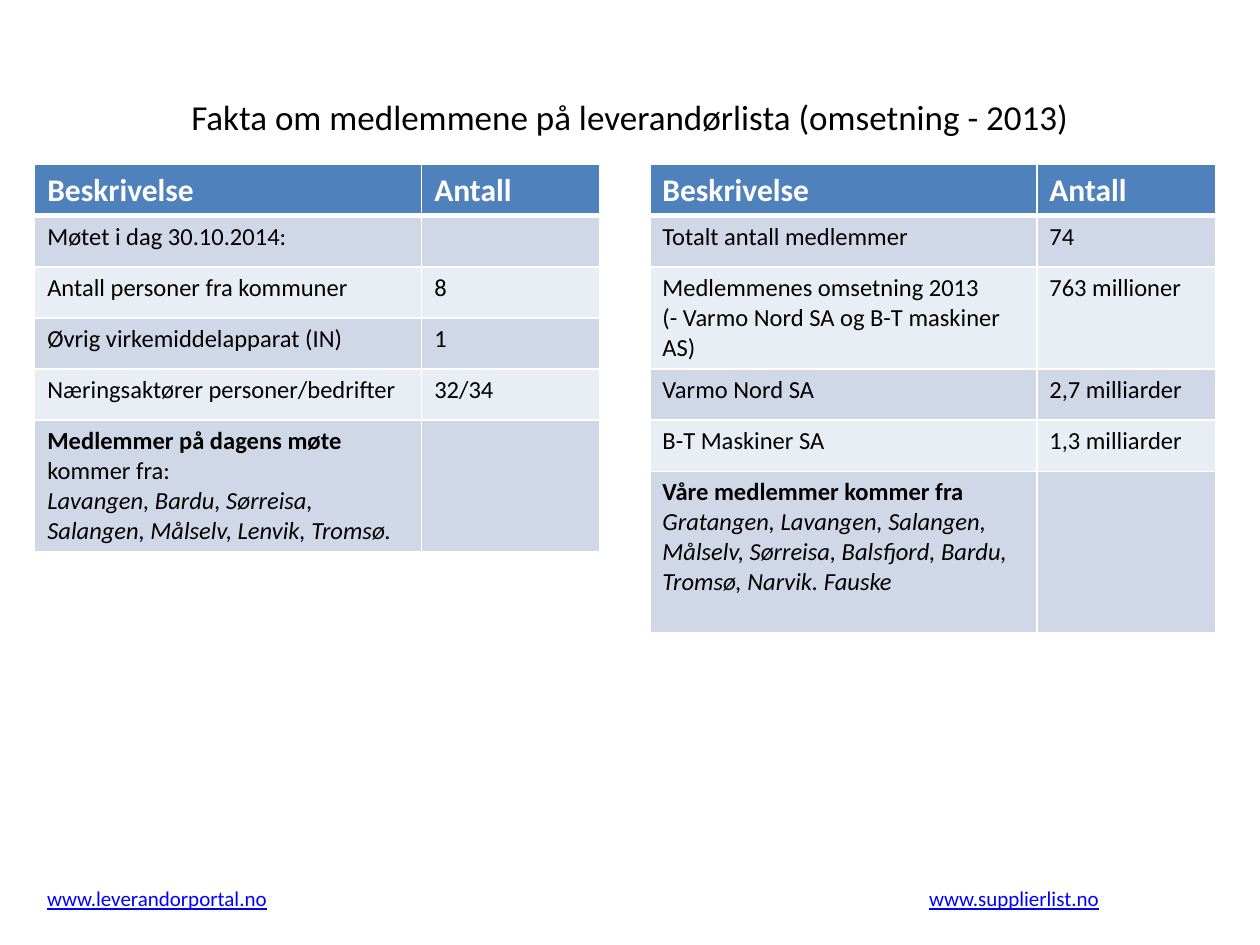
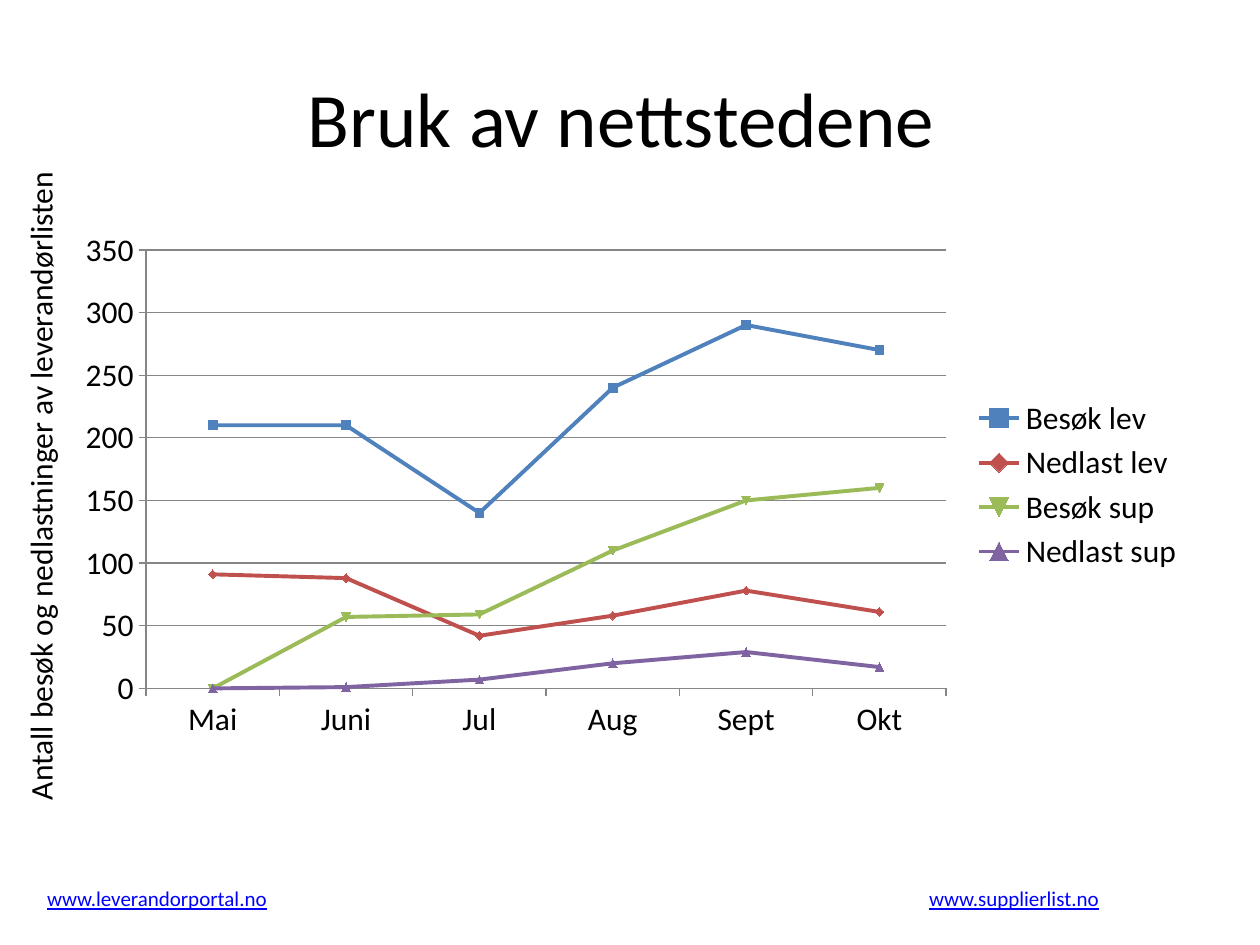
"""Builds two slides with member facts and website usage for a supplier list."""
from typing import NamedTuple

from lxml.etree import SubElement
from pptx import Presentation
from pptx.chart.data import CategoryChartData
from pptx.dml.color import RGBColor
from pptx.enum.chart import XL_CHART_TYPE as ChartType
from pptx.enum.chart import XL_LEGEND_POSITION as LegendPosition
from pptx.enum.chart import XL_TICK_MARK as TickMark
from pptx.enum.text import MSO_ANCHOR as Anchor
from pptx.enum.text import PP_ALIGN as Align
from pptx.oxml.ns import qn
from pptx.util import Cm, Pt

BLACK = RGBColor(0x00, 0x00, 0x00)
WHITE = RGBColor(0xFF, 0xFF, 0xFF)
LINK_BLUE = RGBColor(0x00, 0x00, 0xFF)
HEADER_BLUE = RGBColor(0x4F, 0x81, 0xBD)
BANDS = (RGBColor(0xE9, 0xED, 0xF4), RGBColor(0xD0, 0xD8, 0xE8))
AXIS_GREY = RGBColor(0x86, 0x86, 0x86)
FONT = "Calibri"

LEFT_MARGIN = Cm(0.7)
ROW_HEIGHT = Cm(1.03)
COLUMN_WIDTHS = (Cm(7.8), Cm(3.6))
TABLE_TOP = Cm(3.32)
BORDER_SIDES = ("L", "R", "T", "B")
MONTHS = ("Mai", "Juni", "Jul", "Aug", "Sept", "Okt")


class Span(NamedTuple):
    text: str
    bold: bool = False
    italic: bool = False


class FactRow(NamedTuple):
    description: tuple[tuple[Span, ...], ...]
    count: str = ""
    height: int = ROW_HEIGHT


class FactTable(NamedTuple):
    left: int
    rows: tuple[FactRow, ...]


class Usage(NamedTuple):
    name: str
    visits: tuple[int, ...]
    color: RGBColor


def plain(*lines: str) -> tuple[tuple[Span, ...], ...]:
    return tuple((Span(line),) for line in lines)


MEETING = FactTable(LEFT_MARGIN, (
    FactRow(plain("Møtet i dag 30.10.2014:")),
    FactRow(plain("Antall personer fra kommuner"), "8"),
    FactRow(plain("Øvrig virkemiddelapparat (IN)"), "1"),
    FactRow(plain("Næringsaktører personer/bedrifter"), "32/34"),
    FactRow((
        (Span("Medlemmer på dagens møte ", bold=True), Span("kommer fra:")),
        (Span("Lavangen, Bardu, Sørreisa, Salangen, Målselv, Lenvik, Tromsø.",
              italic=True),),
    ), height=Cm(2.66)),
))
MEMBERS = FactTable(Cm(13.1), (
    FactRow(plain("Totalt antall medlemmer"), "74"),
    FactRow(plain("Medlemmenes omsetning 2013",
                  "(- Varmo Nord SA og B-T maskiner AS)"),
            "763 millioner", Cm(2.06)),
    FactRow(plain("Varmo Nord SA"), "2,7 milliarder"),
    FactRow(plain("B-T Maskiner SA"), "1,3 milliarder"),
    FactRow((
        (Span("Våre medlemmer kommer fra", bold=True),),
        (Span("Gratangen, Lavangen, Salangen, Målselv, Sørreisa, Balsfjord, "
              "Bardu, Tromsø, Narvik. Fauske", italic=True),),
    ), height=Cm(3.25)),
))
USAGE = (
    Usage("Besøk lev", (210, 210, 140, 240, 290, 270), HEADER_BLUE),
    Usage("Nedlast lev", (91, 88, 42, 58, 78, 61), RGBColor(0xC0, 0x50, 0x4D)),
    Usage("Besøk sup", (0, 57, 59, 110, 150, 160), RGBColor(0x9B, 0xBB, 0x59)),
    Usage("Nedlast sup", (0, 1, 7, 20, 29, 17), RGBColor(0x80, 0x64, 0xA2)),
)


def set_font(font, size: int, color: RGBColor = BLACK) -> None:
    font.name, font.size = FONT, Pt(size)
    font.color.rgb = color


def add_footer(slide) -> None:
    footer = slide.shapes.add_textbox(
        LEFT_MARGIN, Cm(17.73), Cm(21.92), Cm(0.77))
    footer.text_frame.word_wrap = True
    links = footer.text_frame.paragraphs[0]
    tabs = SubElement(links._p.get_or_add_pPr(), qn("a:tabLst"))
    SubElement(tabs, qn("a:tab"), pos=str(Cm(17.78)), algn="l")
    set_font(links.font, 12, LINK_BLUE)
    for text in ("www.leverandorportal.no", "\t", "www.supplierlist.no"):
        run = links.add_run()
        run.text = text
        run.font.underline = text != "\t"


def add_titled_slide(deck, heading: str, size: int):
    slide = deck.slides.add_slide(deck.slide_layouts[5])
    add_footer(slide)
    title = slide.shapes.title
    title.left, title.top, title.width, title.height = (
        Cm(1.27), Cm(0.76), Cm(22.86), Cm(3.18))
    title.text_frame.text = heading
    title.text_frame.vertical_anchor = Anchor.MIDDLE
    paragraph = title.text_frame.paragraphs[0]
    paragraph.alignment = Align.CENTER
    set_font(paragraph.font, size)
    return slide


def style_cell(cell, fill: RGBColor, bottom_width: int = 1) -> None:
    properties = cell._tc.get_or_add_tcPr()
    for side in BORDER_SIDES:
        width = Pt(bottom_width if side == "B" else 1)
        border = SubElement(properties, qn(f"a:ln{side}"), w=str(width))
        SubElement(SubElement(border, qn("a:solidFill")),
                   qn("a:srgbClr"), val=str(WHITE))
    cell.fill.solid()
    cell.fill.fore_color.rgb = fill


def write_lines(cell, lines: tuple[tuple[Span, ...], ...], size: int,
                color: RGBColor) -> None:
    for index, spans in enumerate(lines):
        frame = cell.text_frame
        paragraph = frame.add_paragraph() if index else frame.paragraphs[0]
        set_font(paragraph.font, size, color)
        for span in spans:
            run = paragraph.add_run()
            run.text = span.text
            run.font.bold, run.font.italic = span.bold, span.italic


def add_fact_table(slide, facts: FactTable) -> None:
    header = FactRow(((Span("Beskrivelse", bold=True),),), "Antall")
    rows = (header, *facts.rows)
    table = slide.shapes.add_table(
        len(rows), len(COLUMN_WIDTHS), facts.left, TABLE_TOP,
        sum(COLUMN_WIDTHS), sum(row.height for row in rows)).table
    for column, width in zip(table.columns, COLUMN_WIDTHS):
        column.width = width
    for index, row in enumerate(rows):
        is_header = index == 0
        table.rows[index].height = row.height
        fill = HEADER_BLUE if is_header else BANDS[index % 2]
        size, color = (18, WHITE) if is_header else (14, BLACK)
        count = ((Span(row.count, bold=is_header),),) if row.count else ()
        for cell, lines in zip(table.rows[index].cells,
                               (row.description, count)):
            style_cell(cell, fill, 3 if is_header else 1)
            write_lines(cell, lines, size, color)


def style_line(line, color: RGBColor, width: float) -> None:
    line.color.rgb = color
    line.width = Pt(width)


def add_usage_chart(slide) -> None:
    data = CategoryChartData()
    data.categories = MONTHS
    for usage in USAGE:
        data.add_series(usage.name, usage.visits)
    chart = slide.shapes.add_chart(
        ChartType.LINE_MARKERS, Cm(1.27), Cm(4.44), Cm(22.86), Cm(10.67),
        data).chart
    set_font(chart.font, 18)
    chart.has_title = False
    chart.has_legend = True
    chart.legend.position = LegendPosition.RIGHT
    chart.legend.include_in_layout = False
    for axis in (chart.category_axis, chart.value_axis):
        axis.major_tick_mark = TickMark.OUTSIDE
        axis.minor_tick_mark = TickMark.NONE
        style_line(axis.format.line, AXIS_GREY, 0.75)
    counts = chart.value_axis
    counts.minimum_scale, counts.maximum_scale, counts.major_unit = 0, 350, 50
    counts.has_major_gridlines = True
    style_line(counts.major_gridlines.format.line, AXIS_GREY, 0.75)
    plot = chart.plots[0]
    plot.vary_by_categories = False
    for series, usage in zip(plot.series, USAGE):
        series.smooth = False
        style_line(series.format.line, usage.color, 2.25)
        marker = series.marker.format
        marker.fill.solid()
        marker.fill.fore_color.rgb = usage.color
        marker.line.color.rgb = usage.color


def add_axis_caption(slide) -> None:
    caption = slide.shapes.add_textbox(Cm(-5.92), Cm(9.14), Cm(13.46), Cm(1.02))
    caption.rotation = 270
    caption.text_frame.word_wrap = True
    caption.text_frame.text = "Antall besøk og nedlastninger av leverandørlisten"
    set_font(caption.text_frame.paragraphs[0].font, 18)


def main() -> None:
    deck = Presentation()
    deck.slide_width, deck.slide_height = Cm(25.4), Cm(19.05)

    facts_slide = add_titled_slide(
        deck, "Fakta om medlemmene på leverandørlista (omsetning - 2013)", 20)
    for facts in (MEETING, MEMBERS):
        add_fact_table(facts_slide, facts)

    usage_slide = add_titled_slide(deck, "Bruk av nettstedene ", 44)
    add_usage_chart(usage_slide)
    add_axis_caption(usage_slide)

    deck.save("out.pptx")


if __name__ == "__main__":
    main()
